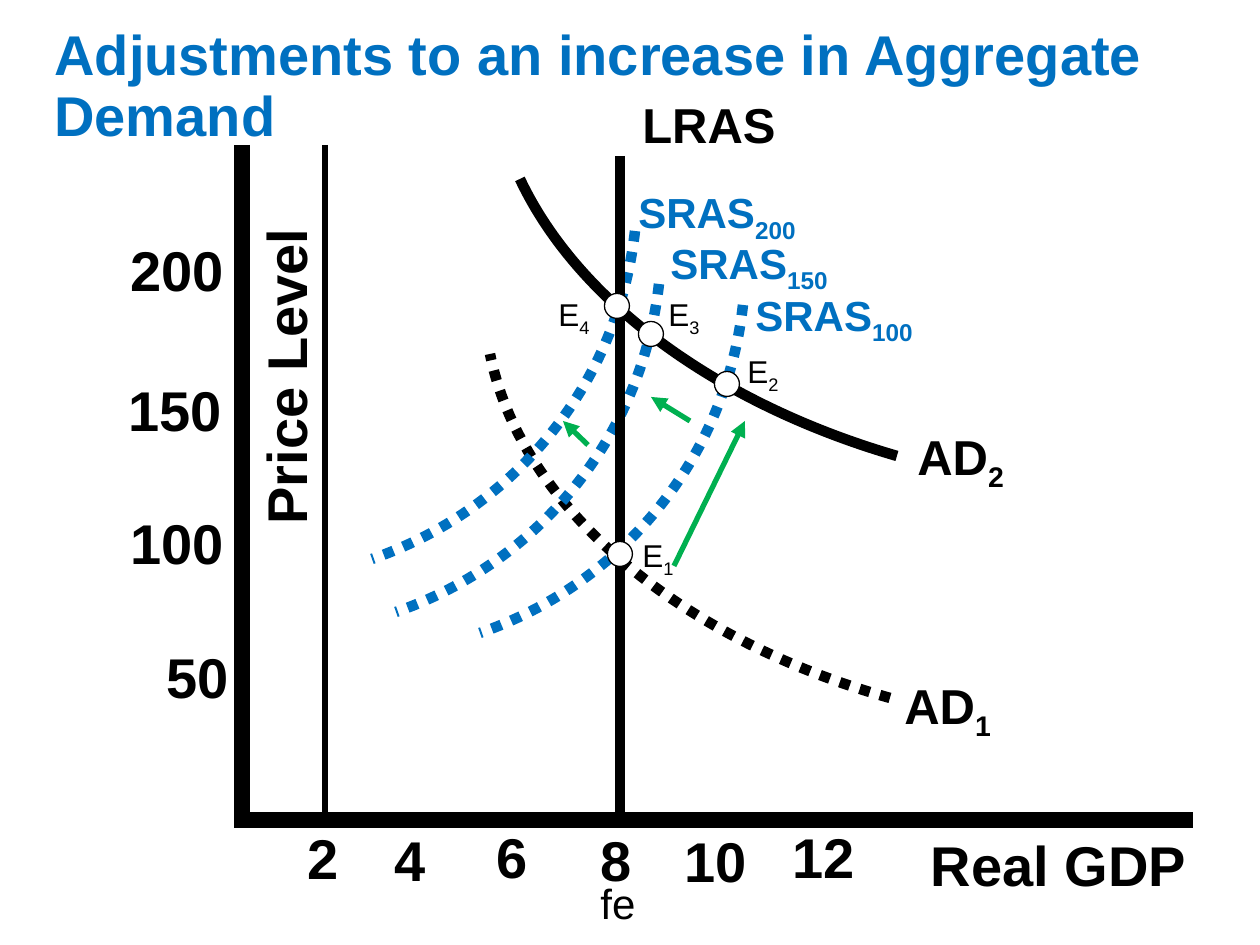
"""Build a slide on the adjustments to an increase in aggregate demand."""
import pptx
import pptx.util
import pptx.dml.color
import pptx.enum.dml
import pptx.enum.shapes
import pptx.enum.text
import pptx.oxml
import pptx.oxml.ns

RGB = pptx.dml.color.RGBColor
BLACK = RGB(0x00, 0x00, 0x00)
WHITE = RGB(0xFF, 0xFF, 0xFF)
BLUE = RGB(0x00, 0x70, 0xC0)
GREEN = RGB(0x00, 0xB0, 0x50)
LEFT = pptx.enum.text.PP_ALIGN.LEFT
MID = pptx.enum.text.PP_ALIGN.CENTER
DOT = pptx.enum.dml.MSO_LINE.ROUND_DOT
KIND = pptx.enum.shapes.MSO_SHAPE
PX = 914400 // 126
FONT = "Arial"
SPACE = 'xmlns:a="http://schemas.openxmlformats.org/drawingml/2006/main"'

TITLE = ("Adjustments to an increase in Aggregate Demand", 42, 21, 1144, 135)
PRICES = [("200", 118, 237, 168, True), ("150", 116, 377, 125, False),
          ("100", 118, 510, 173, True), ("50", 154, 644, 147, False)]
OUTPUTS = [("2", 276, 825, 94), ("4", 368, 827, 84), ("6", 476, 824, 73),
           ("8", 574, 827, 84), ("10", 662, 828, 107), ("12", 766, 824, 116)]
CURVES = [("AD", "1", 892, 670, 168), ("AD", "2", 905, 421, 168), ("LRAS", "", 630, 95, 252)]
SUPPLY = [("100", 743, 284, 220), ("150", 658, 232, 220), ("200", 626, 181, 252)]
POINTS = [("1", 630, 530, 84, 620, 554), ("2", 735, 346, 84, 727, 384),
          ("3", 656, 289, 105, 651, 334), ("4", 546, 289, 63, 617, 306)]
AXES = [(238, 820, 1193, 820, 9), (242, 145, 242, 828, 9), (325, 145, 325, 828, 3)]
LRAS = (620, 156, 620, 818, 6)
ARROWS = [(674, 566, 745, 421), (690, 421, 651, 397), (588, 445, 563, 421)]
AD1 = [(890, 698), (675, 638), (520, 504), (490, 354)]
AD2 = [(897, 456), (718, 404), (578, 302), (520, 179)]
SRAS = [(743, 305), (726, 457), (624, 583), (480, 633)]
SHIFTS = [(0, 0), (-84, -21), (-108, -74)]
DIAM = 25

deck = pptx.Presentation()
deck.slide_width = pptx.util.Inches(10)
deck.slide_height = pptx.util.Inches(7.5)
slide = deck.slides.add_slide(deck.slide_layouts[6])
shapes = slide.shapes


def label(text, x, y, w, h, size, sub="", color=BLACK, bold=True, align=LEFT,
          space=0.9, solid=False):
    area = (x * PX, y * PX, w * PX, h * PX)
    if solid:
        box = shapes.add_shape(KIND.RECTANGLE, *area)
        box.shadow.inherit = False
        box.fill.solid()
        box.fill.fore_color.rgb = WHITE
        box.line.fill.background()
    else:
        box = shapes.add_textbox(*area)
    frame = box.text_frame
    frame.word_wrap = True
    frame.vertical_anchor = pptx.enum.text.MSO_ANCHOR.TOP
    para = frame.paragraphs[0]
    para.alignment = align
    para.line_spacing = space
    font = para.font
    font.name, font.size, font.bold = FONT, pptx.util.Pt(size), bold
    font.color.rgb = color
    para.add_run().text = text
    if sub:
        run = para.add_run()
        run.text = sub
        run.font._element.set("baseline", "-25000")
    return box


def line(x1, y1, x2, y2, width, color=BLACK, arrow=False):
    link = shapes.add_connector(pptx.enum.shapes.MSO_CONNECTOR.STRAIGHT,
                                x1 * PX, y1 * PX, x2 * PX, y2 * PX)
    link.line.width = pptx.util.Pt(width)
    link.line.color.rgb = color
    if arrow:
        tail = pptx.oxml.parse_xml(f'<a:tailEnd {SPACE} type="triangle"/>')
        link.line._get_or_add_ln().append(tail)
    link._element.spPr.append(pptx.oxml.parse_xml(f"<a:effectLst {SPACE}/>"))


def curve(ends, color, dash=None, shift=(0, 0)):
    spots = [((x + shift[0]) * PX, (y + shift[1]) * PX) for x, y in ends]
    form = shapes.build_freeform(*spots[0])
    form.add_line_segments(spots[1:], close=False)
    shape = form.convert_to_shape()
    track = next(shape._element.iter(pptx.oxml.ns.qn("a:path")))
    bend = pptx.oxml.parse_xml(f"<a:cubicBezTo {SPACE}/>")
    for leg in list(track)[1:]:
        bend.append(leg[0])
        track.remove(leg)
    track.append(bend)
    shape.shadow.inherit = False
    shape.fill.background()
    shape.line.width = pptx.util.Pt(6)
    shape.line.color.rgb = color
    if dash:
        shape.line.dash_style = dash


label(*TITLE, 32, color=BLUE, solid=True)
for text, x, y, w, solid in PRICES:
    label(text, x, y, w, 73, 32, solid=solid)
for text, x, y, w in OUTPUTS:
    label(text, x, y, w, 73, 32, align=MID)
label("Price Level", 58, 340, 462, 73, 32, align=MID).rotation = 270
label("Real GDP", 896, 832, 325, 73, 32, align=MID)
label("fe", 588, 881, 95, 53, 24, bold=False, space=0.8)

for axis in AXES:
    line(*axis)
curve(AD1, BLACK, DOT)
curve(SRAS, BLUE, DOT, SHIFTS[0])
curve(AD2, BLACK)
for shift in SHIFTS[1:]:
    curve(SRAS, BLUE, DOT, shift)
line(*LRAS)

for text, sub, x, y, w in CURVES:
    label(text, x, y, w, 67, 28, sub)
for sub, x, y, w in SUPPLY:
    label("SRAS", x, y, w, 58, 24, sub, BLUE)
for arrow in ARROWS:
    line(*arrow, 3, GREEN, True)
for sub, x, y, w, cx, cy in POINTS:
    label("E", x, y, w, 47, 18, sub, bold=False)
    dot = shapes.add_shape(KIND.OVAL, round((cx - DIAM / 2) * PX),
                           round((cy - DIAM / 2) * PX), DIAM * PX, DIAM * PX)
    dot.shadow.inherit = False
    dot.fill.solid()
    dot.fill.fore_color.rgb = WHITE
    dot.line.color.rgb = BLACK
    dot.line.width = pptx.util.Pt(0.75)

deck.save("out.pptx")
